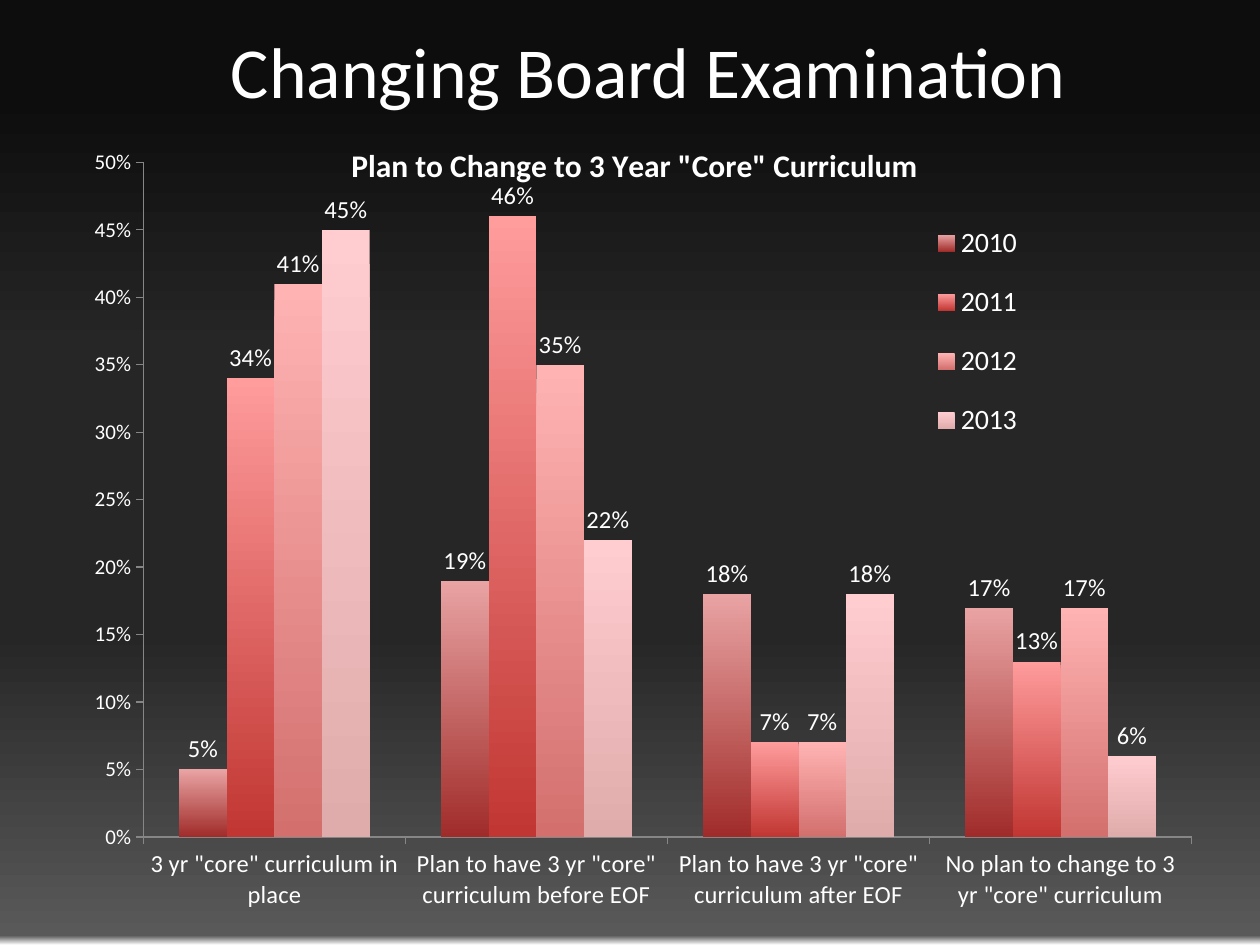
import copy

import lxml.etree
import pptx
import pptx.chart.data
import pptx.dml.color
import pptx.enum.chart
import pptx.enum.text
import pptx.oxml.ns
import pptx.util

Cm = pptx.util.Cm
qn = pptx.oxml.ns.qn

WHITE = "FFFFFF"
AXIS_GREY = "868686"
BACKGROUND_STOPS = [(0.1, "0D0D0D"), (0.37, "262626"), (0.67, "262626"),
                    (0.99, "595959"), (1, WHITE)]
CATEGORIES = [
    '3 yr "core" curriculum in place',
    'Plan to have 3 yr "core" curriculum before EOF',
    'Plan to have 3 yr "core" curriculum after EOF',
    'No plan to change to 3 yr "core" curriculum',
]
SERIES = [
    ("2010", [0.05, 0.19, 0.18, 0.17], "E9A3A3", "A02C2A"),
    ("2011", [0.34, 0.46, 0.07, 0.13], "FF9C9C", "C13632"),
    ("2012", [0.41, 0.35, 0.07, 0.17], "FFB3B3", "D3706E"),
    ("2013", [0.45, 0.22, 0.18, 0.06], "FFCCCF", "E0ABAB"),
]


def color(value):
    """Return the colour for a hex string."""
    return pptx.dml.color.RGBColor.from_string(value)


def style_font(font, size, bold=False):
    """Apply white Calibri in the given size."""
    font.name = "Calibri"
    font.size = pptx.util.Pt(size)
    font.bold = bold
    font.color.rgb = color(WHITE)


def set_gradient(fill, stops):
    """Run a two-stop gradient fill, or a prepared longer one, downwards."""
    fill.gradient_angle = 270
    for stop, (position, value) in zip(fill.gradient_stops, stops):
        stop.position = position
        stop.color.rgb = color(value)


def set_background(slide):
    """Give the slide its dark vertical gradient."""
    fill = slide.background.fill
    fill.gradient()
    stop_list = next(slide.element.iter(qn("a:gsLst")))
    for _ in BACKGROUND_STOPS[2:]:
        stop_list.append(copy.deepcopy(stop_list[-1]))
    set_gradient(fill, BACKGROUND_STOPS)


def add_title(slide, text):
    """Fill and place the title placeholder."""
    title = slide.shapes.title
    title.left, title.top = Cm(1.65), Cm(0.41)
    title.width, title.height = Cm(22.86), Cm(2.26)
    title.text_frame.text = text
    title.text_frame.vertical_anchor = pptx.enum.text.MSO_ANCHOR.TOP
    paragraph = title.text_frame.paragraphs[0]
    paragraph.alignment = pptx.enum.text.PP_ALIGN.CENTER
    style_font(paragraph.runs[0].font, 41)


def set_layout(chart, tag, index, **settings):
    """Place a chart part by fractions of the chart area."""
    parent = next(chart.element.iter(qn(tag)))
    for old_layout in parent.findall(qn("c:layout")):
        parent.remove(old_layout)
    layout = parent.makeelement(qn("c:layout"))
    parent.insert(index, layout)
    manual = lxml.etree.SubElement(layout, qn("c:manualLayout"))
    for name, value in settings.items():
        lxml.etree.SubElement(manual, qn(f"c:{name}"), val=str(value))


def style_axis(axis, size):
    """Format an axis with outside ticks, a grey line and no gridlines."""
    axis.has_major_gridlines = False
    axis.major_tick_mark = pptx.enum.chart.XL_TICK_MARK.OUTSIDE
    axis.minor_tick_mark = pptx.enum.chart.XL_TICK_MARK.NONE
    axis.format.line.color.rgb = color(AXIS_GREY)
    axis.format.line.width = pptx.util.Pt(0.75)
    style_font(axis.tick_labels.font, size)


def style_series(series, top, bottom):
    """Give a series its gradient and percentage labels."""
    series.format.fill.gradient()
    set_gradient(series.format.fill, [(0, top), (1, bottom)])
    labels = series.data_labels
    labels.show_value = True
    labels.number_format = "0%"
    labels.number_format_is_linked = False
    labels.position = pptx.enum.chart.XL_LABEL_POSITION.OUTSIDE_END
    style_font(labels.font, 14)


def add_curriculum_chart(slide):
    """Add the clustered columns of curriculum plans by year."""
    data = pptx.chart.data.CategoryChartData(number_format="0%")
    data.categories = CATEGORIES
    for name, values, _, _ in SERIES:
        data.add_series(name, values)
    chart = slide.shapes.add_chart(
        pptx.enum.chart.XL_CHART_TYPE.COLUMN_CLUSTERED,
        Cm(0.66), Cm(2.46), Cm(24.26), Cm(15.98), data).chart
    style_font(chart.font, 10)

    chart.has_title = True
    chart.chart_title.text_frame.text = 'Plan to Change to 3 Year "Core" Curriculum'
    title_run = chart.chart_title.text_frame.paragraphs[0].runs[0]
    style_font(title_run.font, 18, bold=True)

    chart.has_legend = True
    chart.legend.position = pptx.enum.chart.XL_LEGEND_POSITION.RIGHT
    chart.legend.include_in_layout = False
    style_font(chart.legend.font, 16)

    style_axis(chart.category_axis, 14)
    style_axis(chart.value_axis, 12)
    chart.value_axis.minimum_scale = 0
    chart.value_axis.maximum_scale = 0.5
    chart.value_axis.major_unit = 0.05
    chart.value_axis.tick_labels.number_format = "0%"
    chart.value_axis.tick_labels.number_format_is_linked = False

    plot = chart.plots[0]
    plot.gap_width = 150
    plot.overlap = 0
    plot.vary_by_categories = False
    for series, (_, _, top, bottom) in zip(plot.series, SERIES):
        style_series(series, top, bottom)

    set_layout(chart, "c:title", 1, xMode="edge", yMode="edge", x=0.26, y=0.02)
    set_layout(chart, "c:plotArea", 0, layoutTarget="inner", xMode="edge",
               yMode="edge", x=0.092, y=0.051, w=0.871, h=0.851)
    set_layout(chart, "c:legend", 1, xMode="edge", yMode="edge",
               x=0.72, y=0.1, w=0.13, h=0.33)


def main():
    """Build and save the presentation."""
    presentation = pptx.Presentation()
    presentation.slide_width, presentation.slide_height = Cm(25.4), Cm(19.05)
    slide = presentation.slides.add_slide(presentation.slide_layouts[5])
    set_background(slide)
    add_title(slide, "Changing Board Examination")
    add_curriculum_chart(slide)
    presentation.save("out.pptx")


if __name__ == "__main__":
    main()
